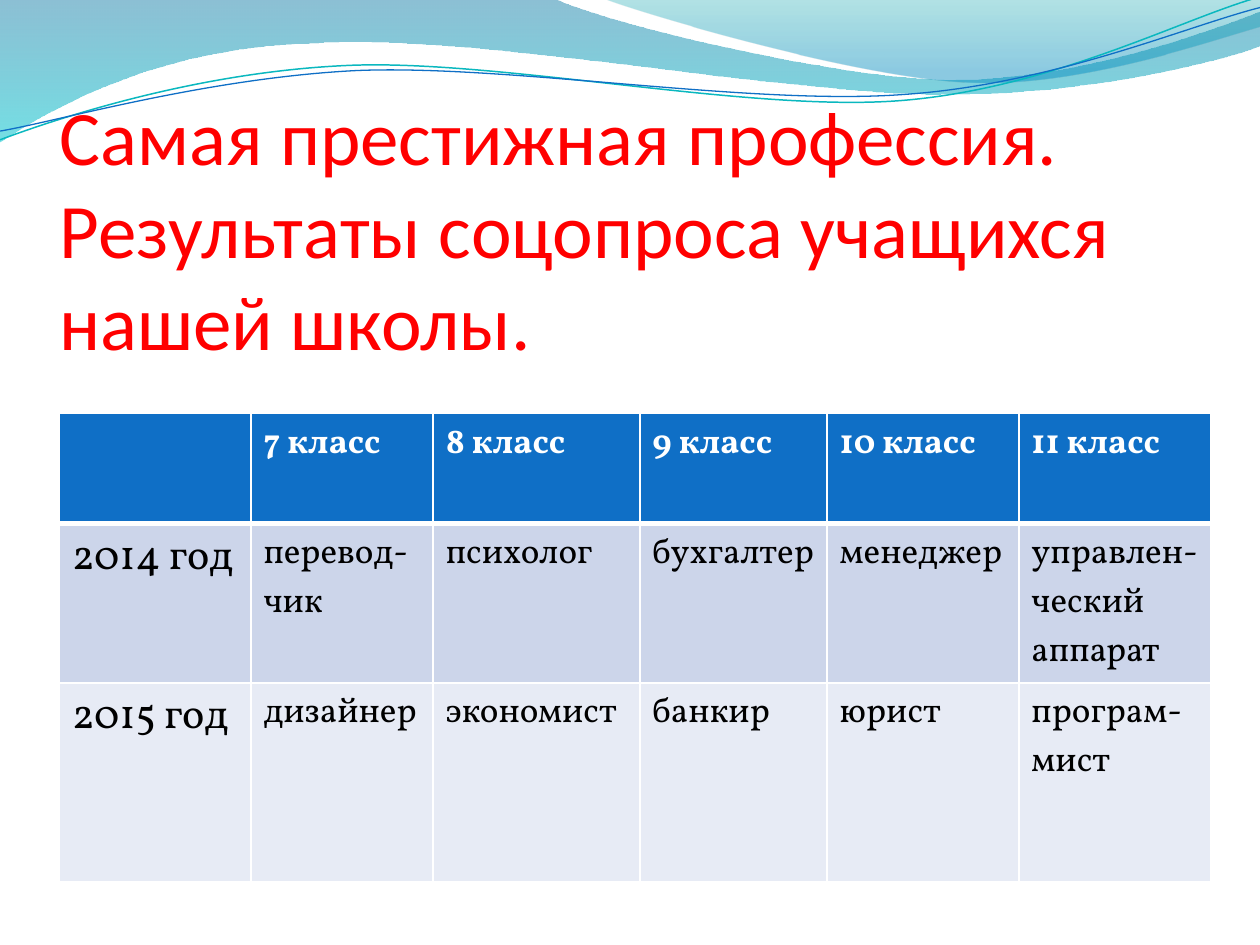
from lxml.etree import SubElement
from pptx import Presentation
from pptx.dml.color import RGBColor
from pptx.enum.text import MSO_ANCHOR
from pptx.oxml import parse_xml
from pptx.oxml.ns import nsdecls, qn
from pptx.util import Pt

WHITE = RGBColor(0xFF, 0xFF, 0xFF)
BLACK = RGBColor(0, 0, 0)
RED = RGBColor(0xFF, 0, 0)
BLUE = RGBColor(0x0F, 0x6F, 0xC6)
TEAL = RGBColor(0x0A, 0xB8, 0xBF)
DEEP_BLUE = RGBColor(0x00, 0x74, 0xA1)
CYAN = RGBColor(0x00, 0xC6, 0xCF)
SEA = RGBColor(0x00, 0xA1, 0xA9)
SKY = RGBColor(0x00, 0x8B, 0xBF)
BAND_DARK = RGBColor(0xCC, 0xD5, 0xEA)
BAND_LIGHT = RGBColor(0xE7, 0xEB, 0xF5)

UNITS = 100

BROAD_WAVE = [
    (0, 0), (316.8, -0.7),
    (342.7, 12.2, 478.1, 45.4, 545.8, 45.4),
    (614.2, 45.4, 689.8, 18.7, 720, 6.5),
    (720.7, 25.9),
    (707.8, 31.7, 626.4, 54.7, 537.1, 54),
    (447.8, 54, 275, 20.2, 185, 24.5),
    (92.9, 25.9, 33.1, 59.8, -0.7, 81.4),
    (0, 0),
]
CORNER_WAVE = [
    (344.9, -0.7),
    (366.5, 7.9, 491, 44.6, 553.7, 46.8),
    (616.3, 49.7, 691.9, 23, 720, 15.1),
    (720, 0), (344.9, -0.7),
]
TEAL_STRAND = [
    (0, 79.9),
    (34.6, 67, 113.8, 41, 199.4, 37.4),
    (284.4, 33.8, 427, 64.1, 513.4, 57.6),
    (599.8, 51.1, 675.4, 10.8, 718.6, -1.4),
]
BLUE_STRAND = [
    (0, 74.9),
    (33.8, 69.1, 118.1, 44.6, 203.8, 40.3),
    (290.2, 36.7, 429.1, 60.5, 516.2, 54),
    (601.9, 48.2, 677.5, 15.1, 720, 4.3),
]

TITLE = "Самая престижная профессия.\vРезультаты соцопроса учащихся нашей школы."
COLUMN_WIDTHS = [109.4, 104.2, 118.1, 107, 109.6, 109.8]
ROW_HEIGHTS = [62.9, 91, 113.5]
ROW_FILLS = [BLUE, BAND_DARK, BAND_LIGHT]
ROWS = [
    ["", "7 класс", "8 класс", "9 класс", "10 класс", "11 класс"],
    ["2014 год", "перевод-чик", "психолог", "бухгалтер", "менеджер",
     "управлен-\nческий аппарат"],
    ["2015 год", "дизайнер", "экономист", "банкир", "юрист", "програм-мист"],
]


def add_outline(slide, left, top, segments, close):
    points = [(segment[i] * UNITS, segment[i + 1] * UNITS)
              for segment in segments for i in range(0, len(segment), 2)]
    builder = slide.shapes.build_freeform(*points[0], scale=Pt(1) / UNITS)
    builder.add_line_segments(points[1:], close=close)
    shape = builder.convert_to_shape(Pt(left), Pt(top))
    shape.shadow.inherit = False
    lines = iter(list(shape.element.spPr.iter(qn("a:lnTo"))))
    for segment in segments[1:]:
        line = next(lines)
        if len(segment) == 6:
            line.tag = qn("a:cubicBezTo")
            for extra in (next(lines), next(lines)):
                line.append(extra[0])
                extra.getparent().remove(extra)
    return shape


def add_wave(slide, left, top, segments, stops):
    shape = add_outline(slide, left, top, segments, True)
    shape.line.fill.background()
    shape.fill.gradient()
    shape.fill.gradient_angle = 270
    for stop, (position, color, opacity) in zip(shape.fill.gradient_stops, stops):
        stop.position = position
        stop.color.rgb = color
    for element, (_, _, opacity) in zip(shape.element.spPr.iter(qn("a:srgbClr")), stops):
        SubElement(element, qn("a:alpha")).set("val", str(opacity * 1000))


def add_strand(slide, left, top, segments, color, width):
    shape = add_outline(slide, left, top, segments, False)
    shape.fill.background()
    shape.line.color.rgb = color
    shape.line.width = Pt(width)


def add_header_waves(slide, left, top):
    add_wave(slide, left, top, BROAD_WAVE, [(0, DEEP_BLUE, 45), (1, CYAN, 55)])
    add_wave(slide, left, top, CORNER_WAVE, [(0, SEA, 30), (0.8, SKY, 45)])
    add_strand(slide, left, top, TEAL_STRAND, TEAL, 0.85)
    add_strand(slide, left, top, BLUE_STRAND, BLUE, 0.75)


def format_text(text_frame, font_name, size, color, bold=False):
    for paragraph in text_frame.paragraphs:
        paragraph.font.size = Pt(size)
        for run in paragraph.runs:
            run.font.name = font_name
            run.font.size = Pt(size)
            run.font.color.rgb = color
            run.font.bold = bold


def add_title(slide, left, top, width, height):
    shape = slide.shapes.add_textbox(Pt(left), Pt(top), Pt(width), Pt(height))
    text_frame = shape.text_frame
    text_frame.word_wrap = True
    text_frame.vertical_anchor = MSO_ANCHOR.BOTTOM
    text_frame.margin_left = text_frame.margin_right = text_frame.margin_bottom = 0
    text_frame.margin_top = Pt(3.6)
    text_frame.text = TITLE
    format_text(text_frame, "Calibri", 44, RED)


def set_borders(cell, widths):
    properties = cell._tc.get_or_add_tcPr()
    for index, (side, width) in enumerate(zip("LRTB", widths)):
        properties.insert(index, parse_xml(
            f'<a:ln{side} {nsdecls("a")} w="{Pt(width)}"><a:solidFill>'
            f'<a:srgbClr val="{WHITE}"/></a:solidFill></a:ln{side}>'))


def add_survey_table(slide, left, top):
    frame = slide.shapes.add_table(
        len(ROWS), len(COLUMN_WIDTHS), Pt(left), Pt(top),
        Pt(sum(COLUMN_WIDTHS)), Pt(sum(ROW_HEIGHTS)))
    table = frame.table
    for column, width in zip(table.columns, COLUMN_WIDTHS):
        column.width = Pt(width)
    for row_index, texts in enumerate(ROWS):
        table.rows[row_index].height = Pt(ROW_HEIGHTS[row_index])
        is_header = row_index == 0
        for column_index, text in enumerate(texts):
            cell = table.cell(row_index, column_index)
            cell.text_frame.text = text
            size = 24 if column_index == 0 and not is_header else 20
            format_text(cell.text_frame, "Vollkorn", size,
                        WHITE if is_header else BLACK, is_header)
            cell.fill.solid()
            cell.fill.fore_color.rgb = ROW_FILLS[row_index]
            set_borders(cell, (1, 1, 3 if row_index == 1 else 1, 3 if is_header else 1))


def main():
    presentation = Presentation()
    presentation.slide_width = Pt(720)
    presentation.slide_height = Pt(540)
    slide = presentation.slides.add_slide(presentation.slide_layouts[6])
    add_header_waves(slide, 0, 0)
    add_title(slide, 34, 56.4, 662, 152.6)
    add_survey_table(slide, 34, 236.3)
    presentation.save("out.pptx")


if __name__ == "__main__":
    main()
